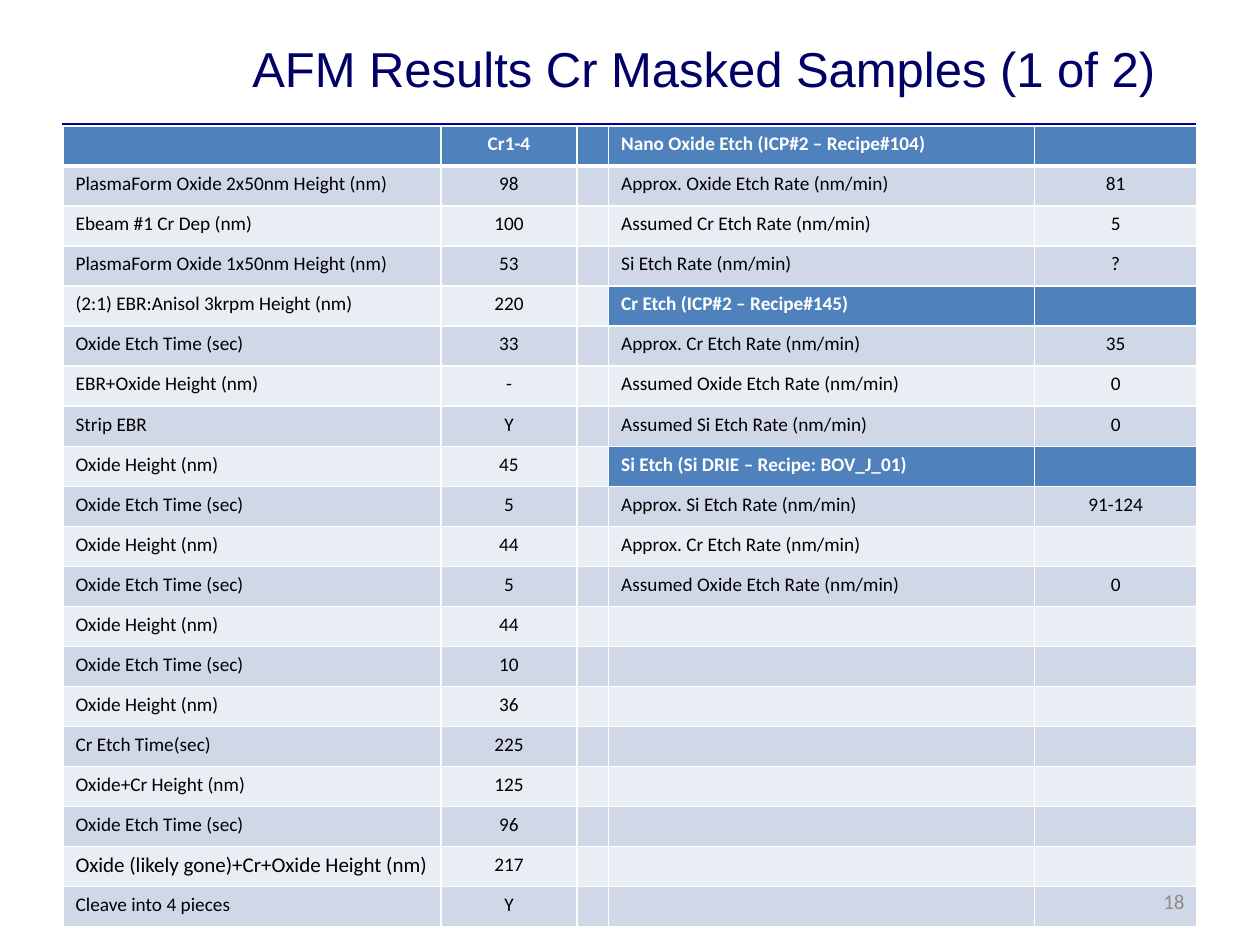
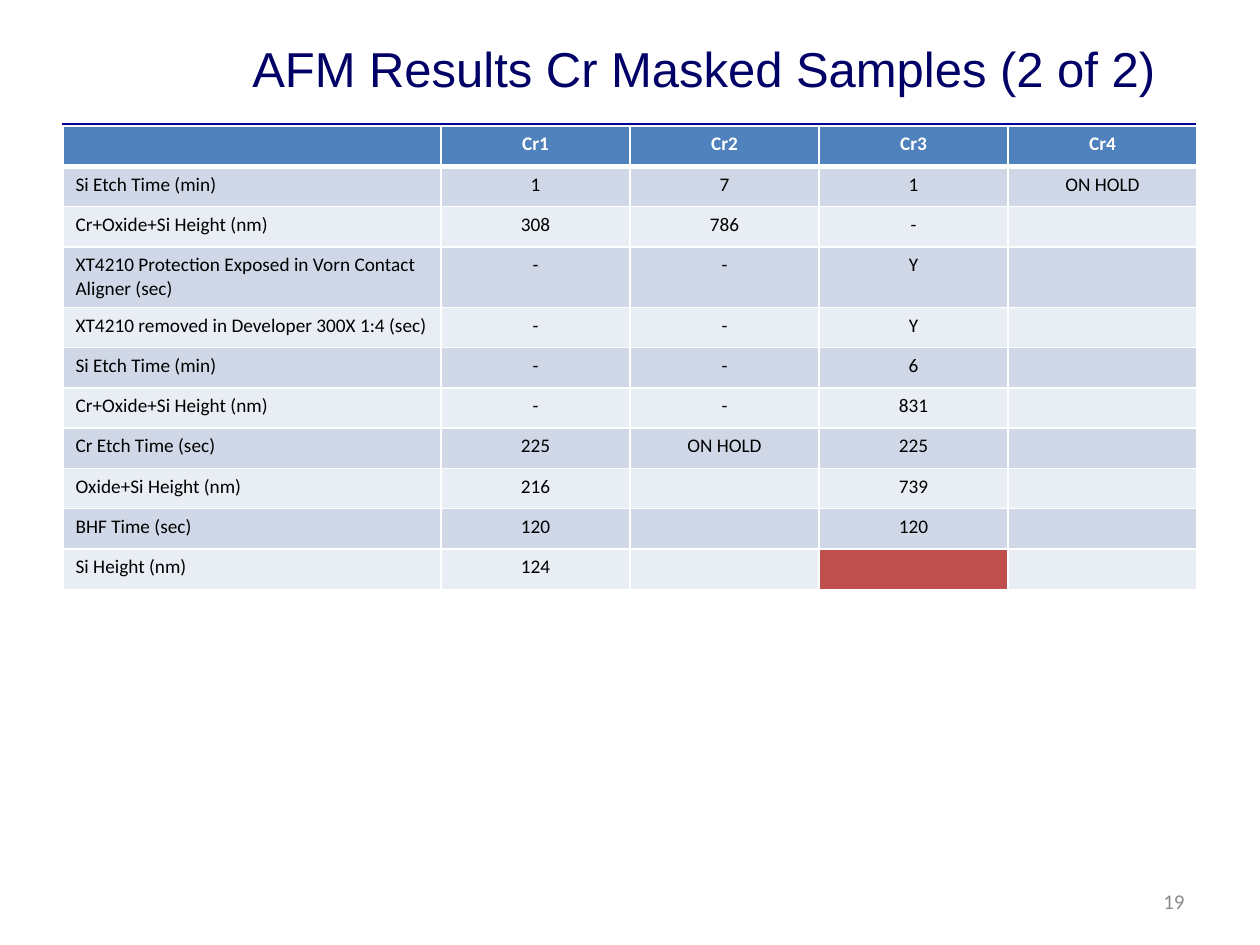
from itertools import product, zip_longest

from lxml.etree import SubElement as Sub
from pptx import Presentation
from pptx.dml.color import RGBColor
from pptx.enum.shapes import MSO_CONNECTOR as Conn
from pptx.enum.text import MSO_ANCHOR as Anchor, PP_ALIGN as Align
from pptx.oxml.ns import qn
from pptx.util import Inches, Pt

# Shared look
NAVY = RGBColor(0x00, 0x00, 0x66)
RULE = RGBColor(0x00, 0x00, 0x99)
HEAD = RGBColor(0x4F, 0x81, 0xBD)
BANDS = (RGBColor(0xE9, 0xED, 0xF4), RGBColor(0xD0, 0xD8, 0xE8))
RED = RGBColor(0xC0, 0x50, 0x4D)
GRAY = RGBColor(0x8C, 0x8C, 0x8C)
WHITE = RGBColor(0xFF, 0xFF, 0xFF)
BLACK = RGBColor(0x00, 0x00, 0x00)
PITCH = 0.32

# Slide 1: process steps on the left, etch rates on the right
STEPS = [
    ("", "Cr1-4"),
    ("PlasmaForm Oxide 2x50nm Height (nm)", "98"),
    ("Ebeam #1 Cr Dep (nm)", "100"),
    ("PlasmaForm Oxide 1x50nm Height (nm)", "53"),
    ("(2:1) EBR:Anisol 3krpm Height (nm)", "220"),
    ("Oxide Etch Time (sec)", "33"),
    ("EBR+Oxide Height (nm)", "-"),
    ("Strip EBR", "Y"),
    ("Oxide Height (nm)", "45"),
    ("Oxide Etch Time (sec)", "5"),
    ("Oxide Height (nm)", "44"),
    ("Oxide Etch Time (sec)", "5"),
    ("Oxide Height (nm)", "44"),
    ("Oxide Etch Time (sec)", "10"),
    ("Oxide Height (nm)", "36"),
    ("Cr Etch Time(sec)", "225"),
    ("Oxide+Cr Height (nm)", "125"),
    ("Oxide Etch Time (sec)", "96"),
    ("Oxide (likely gone)+Cr+Oxide Height (nm)", "217"),
    ("Cleave into 4 pieces", "Y"),
]
RATES = [
    ("Nano Oxide Etch (ICP#2 – Recipe#104)", ""),
    ("Approx. Oxide Etch Rate (nm/min)", "81"),
    ("Assumed Cr Etch Rate (nm/min)", "5"),
    ("Si Etch Rate (nm/min)", "?"),
    ("Cr Etch (ICP#2 – Recipe#145)", ""),
    ("Approx. Cr Etch Rate (nm/min)", "35"),
    ("Assumed Oxide Etch Rate (nm/min)", "0"),
    ("Assumed Si Etch Rate (nm/min)", "0"),
    ("Si Etch (Si DRIE – Recipe: BOV_J_01)", ""),
    ("Approx. Si Etch Rate (nm/min)", "91-124"),
    ("Approx. Cr Etch Rate (nm/min)", ""),
    ("Assumed Oxide Etch Rate (nm/min)", "0"),
]

# Slide 2: one column for each piece
PIECES = [
    ("", "Cr1", "Cr2", "Cr3", "Cr4"),
    ("Si Etch Time (min)", "1", "7", "1", "ON HOLD"),
    ("Cr+Oxide+Si Height (nm)", "308", "786", "-", ""),
    ("XT4210 Protection Exposed in Vorn Contact Aligner (sec)",
     "-", "-", "Y", ""),
    ("XT4210 removed in Developer 300X 1:4 (sec)", "-", "-", "Y", ""),
    ("Si Etch Time (min)", "-", "-", "6", ""),
    ("Cr+Oxide+Si Height (nm)", "-", "-", "831", ""),
    ("Cr Etch Time (sec)", "225", "ON HOLD", "225", ""),
    ("Oxide+Si Height (nm)", "216", "", "739", ""),
    ("BHF Time (sec)", "120", "", "120", ""),
    ("Si Height (nm)", "124", "", "", ""),
]


def style(par, size, color, align, face="Calibri", bold=False):
    par.alignment = align
    font = par.font
    font.name, font.size, font.bold = face, Pt(size), bold
    font.color.rgb = color


def add_text(slide, box, text, *look):
    frame = slide.shapes.add_textbox(*map(Inches, box)).text_frame
    frame.word_wrap = True
    frame.vertical_anchor = Anchor.MIDDLE
    frame.text = text
    style(frame.paragraphs[0], *look)


def add_rule(slide):
    ends = map(Inches, (0.49, 1, 9.49, 1))
    line = slide.shapes.add_connector(Conn.STRAIGHT, *ends)
    line.line.color.rgb = RULE
    line.line.width = Pt(3)
    Sub(line._element.spPr, qn("a:effectLst"))


def add_edges(cell, top, bottom):
    props = cell._tc.get_or_add_tcPr()
    for side, width in zip("LRTB", (1, 1, top, bottom)):
        edge = Sub(props, qn(f"a:ln{side}"), w=str(Pt(width)))
        fill = Sub(edge, qn("a:solidFill"))
        Sub(fill, qn("a:srgbClr"), val=str(WHITE))


def fill_cell(cell, text, fill, size, align, top, bottom):
    add_edges(cell, top, bottom)
    cell.fill.solid()
    cell.fill.fore_color.rgb = fill
    par = cell.text_frame.paragraphs[0]
    if text:
        par.text = text
    else:
        Sub(par._p, qn("a:endParaRPr"), sz=str(size * 100))
    head = fill == HEAD
    style(par, size, WHITE if head else BLACK, align, "Calibri", head)


def add_grid(slide, rows, widths, heights, labels, fills=None, sizes=None):
    """fills and sizes map (row, column) to what differs from the rule."""
    fills, sizes = fills or {}, sizes or {}
    box = map(Inches, (0.5, 1, sum(widths), sum(heights)))
    table = slide.shapes.add_table(len(rows), len(widths), *box).table
    for col, width in zip(table.columns, widths):
        col.width = Inches(width)
    for row, height in zip(table.rows, heights):
        row.height = Inches(height)
    for r, c in product(range(len(rows)), range(len(widths))):
        fill = fills.get((r, c), BANDS[r % 2] if r else HEAD)
        align = Align.LEFT if c in labels else Align.CENTER
        fill_cell(table.cell(r, c), rows[r][c], fill, sizes.get((r, c), 11),
                  align, 3 if r == 1 else 1, 3 if r == 0 else 1)


def add_slide(deck, part):
    slide = deck.slides.add_slide(deck.slide_layouts[6])
    add_rule(slide)
    add_text(slide, (1.67, 0.08, 7.83, 0.92),
             f"AFM Results Cr Masked Samples ({part} of 2)",
             28, NAVY, Align.CENTER, "Arial")
    return slide


def add_number(slide, number):
    add_text(slide, (7.17, 6.95, 2.33, 0.4), str(number),
             12, GRAY, Align.RIGHT)


def main():
    deck = Presentation()
    deck.slide_width, deck.slide_height = Inches(10), Inches(7.5)

    # Steps and rates
    slide = add_slide(deck, 1)
    pairs = zip_longest(STEPS, RATES, fillvalue=("", ""))
    rows = [(*step, "", *rate) for step, rate in pairs]
    add_grid(slide, rows, (3, 1.08, 0.25, 3.38, 1.29),
             [6.36 / len(rows)] * len(rows), labels=(0, 3),
             fills={spot: HEAD for spot in product((4, 8), (3, 4))},
             sizes={(18, 0): 12})
    add_number(slide, 18)

    # Pieces
    slide = add_slide(deck, 2)
    heights = [PITCH] * len(PIECES)
    heights[3] = 0.48
    add_grid(slide, PIECES, (3, 1.5, 1.5, 1.5, 1.5), heights,
             labels=(0,), fills={(10, 3): RED})
    add_number(slide, 19)

    deck.save("out.pptx")


if __name__ == "__main__":
    main()
